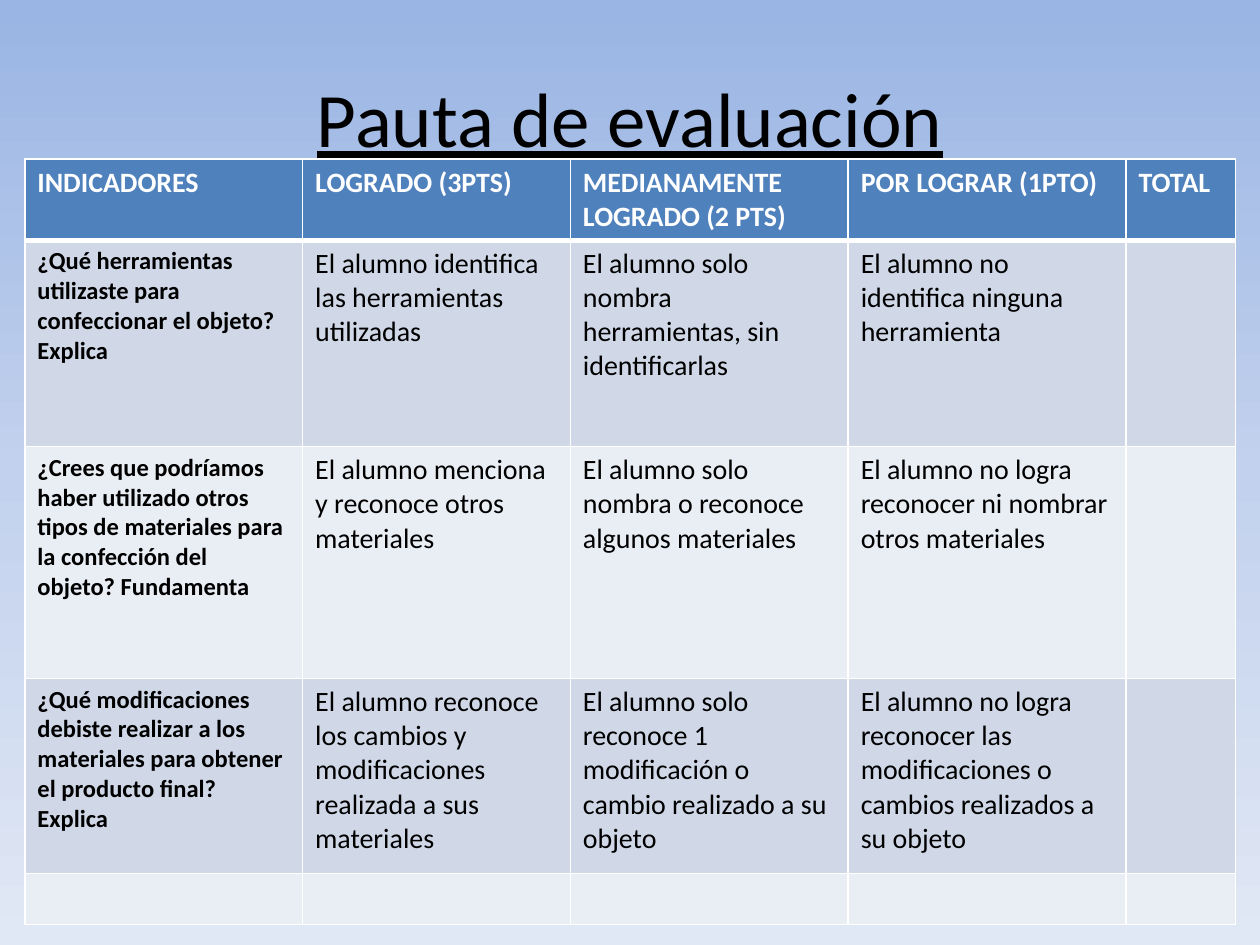
from copy import deepcopy

from lxml import etree
from pptx import Presentation
from pptx.dml.color import RGBColor
from pptx.enum import text
from pptx.oxml.ns import qn
from pptx.util import Pt

# Content
TITLE = "Pauta de evaluación"
RUBRIC = [
    ("INDICADORES", "LOGRADO (3PTS)", "MEDIANAMENTE LOGRADO (2 PTS)",
     "POR LOGRAR (1PTO)", "TOTAL"),
    ("¿Qué herramientas utilizaste para confeccionar el objeto? Explica",
     "El alumno identifica las herramientas utilizadas",
     "El alumno solo nombra herramientas, sin identificarlas",
     "El alumno no identifica ninguna herramienta", ""),
    ("¿Crees que podríamos haber utilizado otros tipos de materiales para "
     "la confección del objeto? Fundamenta",
     "El alumno menciona y reconoce otros materiales",
     "El alumno solo nombra o reconoce algunos materiales",
     "El alumno no logra reconocer ni nombrar otros materiales", ""),
    ("¿Qué modificaciones debiste realizar a los materiales para obtener "
     "el producto final? Explica",
     "El alumno reconoce los cambios y modificaciones realizada a sus materiales",
     "El alumno solo reconoce 1 modificación o cambio realizado a su objeto",
     "El alumno no logra reconocer las modificaciones o cambios realizados "
     "a su objeto", ""),
    ("",) * 5,
]
COLUMN_WIDTHS = [158.75, 153, 158.75, 158.75, 62.5]
ROW_HEIGHTS = [45.5, 118, 132.5, 111.5, 28.5]
FONT = "Calibri"
COLORS = {
    "sky_top": "9AB5E4", "sky_middle": "C2D1ED", "sky_bottom": "E1E8F5",
    "header": "4F81BD", "odd_row": "D0D8E8", "even_row": "E9EDF4",
    "white": "FFFFFF", "black": "000000",
}


def rgb(name):
    return RGBColor.from_string(COLORS[name])


def add_run(paragraph, words, size, color, bold=False):
    run = paragraph.add_run()
    run.text = words
    run.font.name, run.font.size, run.font.bold = FONT, Pt(size), bold
    run.font.color.rgb = rgb(color)
    return run


def set_borders(cell, bottom, top):
    properties = cell._tc.get_or_add_tcPr()
    widths = {"L": 1, "R": 1, "T": top, "B": bottom}
    for position, (side, width) in enumerate(widths.items()):
        line = etree.Element(qn(f"a:ln{side}"), w=str(Pt(width)))
        fill = etree.SubElement(line, qn("a:solidFill"))
        etree.SubElement(fill, qn("a:srgbClr"), val=COLORS["white"])
        properties.insert(position, line)


deck = Presentation()
deck.slide_width, deck.slide_height = Pt(720), Pt(540)
slide = deck.slides.add_slide(deck.slide_layouts[5])

# Background: three-stop vertical gradient
sky = slide.background.fill
sky.gradient()
sky.gradient_angle = 270
first_stop = slide._element.find(".//" + qn("a:gs"))
first_stop.addnext(deepcopy(first_stop))
for stop, position, name in zip(sky.gradient_stops, (0, 0.5, 1),
                                ("sky_top", "sky_middle", "sky_bottom")):
    stop.position = position
    stop.color.rgb = rgb(name)

# Title
title = slide.shapes.title
title.left, title.top, title.width, title.height = Pt(36), Pt(21.6), Pt(648), Pt(90)
title.text_frame.vertical_anchor = text.MSO_ANCHOR.MIDDLE
heading = title.text_frame.paragraphs[0]
heading.alignment = text.PP_ALIGN.CENTER
add_run(heading, TITLE, 44, "black").font.underline = True

# Rubric table
rubric = slide.shapes.add_table(
    len(RUBRIC), len(COLUMN_WIDTHS), Pt(14.2), Pt(90.9),
    Pt(sum(COLUMN_WIDTHS)), Pt(sum(ROW_HEIGHTS))).table
for column, width in zip(rubric.columns, COLUMN_WIDTHS):
    column.width = Pt(width)
for row, height in zip(rubric.rows, ROW_HEIGHTS):
    row.height = Pt(height)

for r, entries in enumerate(RUBRIC):
    is_header = r == 0
    band = "header" if is_header else "odd_row" if r % 2 else "even_row"
    for c, words in enumerate(entries):
        cell = rubric.cell(r, c)
        cell.fill.solid()
        cell.fill.fore_color.rgb = rgb(band)
        set_borders(cell, bottom=3 if is_header else 1, top=3 if r == 1 else 1)
        if words:
            is_question = c == 0 and not is_header
            add_run(cell.text_frame.paragraphs[0], words,
                    size=14 if is_question else 16,
                    color="white" if is_header else "black",
                    bold=is_header or is_question)

deck.save("out.pptx")
